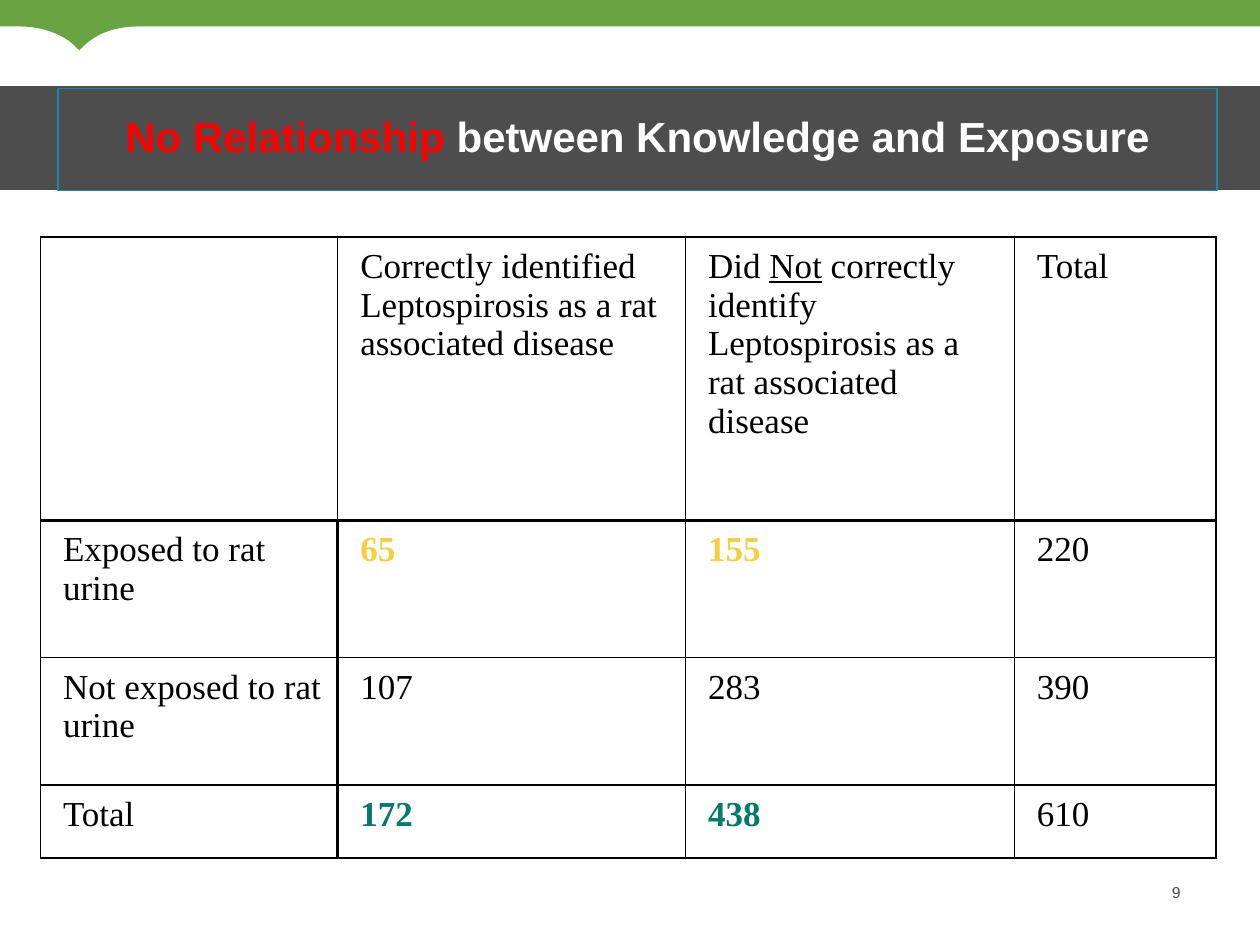
"""Builds a slide with a cross table of disease knowledge against exposure."""
import pptx
import pptx.enum.shapes
import pptx.enum.text
import pptx.oxml
import pptx.util
from pptx.dml.color import RGBColor
from pptx.oxml.ns import nsdecls
from pptx.util import Inches, Pt

GREEN = RGBColor(0x6A, 0xA3, 0x42)
GRAY = RGBColor(0x4D, 0x4D, 0x4D)
BLUE = RGBColor(0x15, 0x8C, 0xA6)
RED = RGBColor(0xFF, 0, 0)
WHITE = RGBColor(0xFF, 0xFF, 0xFF)
BLACK = RGBColor(0, 0, 0)
YELLOW = RGBColor(0xF7, 0xCE, 0x3C)
TEAL = RGBColor(0, 0x7B, 0x69)

WIDTH, HEIGHT = 10, 7.5
TITLE = [("No Relationship ", RED), ("between Knowledge and Exposure", WHITE)]
PAGE = "9"
ROWS = [
    ["", "Correctly identified Leptospirosis as a rat associated disease",
     ("Did ", "Not", " correctly identify Leptospirosis as a rat associated disease"), "Total"],
    ["Exposed to rat urine", "65", "155", "220"],
    ["Not exposed to rat urine", "107", "283", "390"],
    ["Total", "172", "438", "610"],
]
HIGHLIGHTS = {(1, 1): YELLOW, (1, 2): YELLOW, (3, 1): TEAL, (3, 2): TEAL}
COL_WIDTHS = [2.36, 2.76, 2.61, 1.6]
ROW_HEIGHTS = [2.25, 1.09, 1.01, 0.58]
THIN, THICK = 1, 2.25
BAND_DEPTH = 0.21
NOTCH = [
    [(1.12, BAND_DEPTH), (0.96, BAND_DEPTH), (0.83, 0.24), (0.72, 0.32)],
    [(0.72, 0.32), (0.69, 0.34), (0.66, 0.37), (0.63, 0.4)],
    [(0.63, 0.4), (0.6, 0.37), (0.57, 0.34), (0.54, 0.32)],
    [(0.54, 0.32), (0.42, 0.24), (0.29, BAND_DEPTH), (0.13, BAND_DEPTH)],
]


def curve_points(a, b, c, d, steps=12):
    for i in range(steps + 1):
        t = i / steps
        u = 1 - t
        yield tuple(u**3 * a[k] + 3 * u * u * t * b[k] + 3 * u * t * t * c[k] + t**3 * d[k]
                    for k in (0, 1))


def add_run(p, text, size, font, color, bold=False, underline=False):
    r = p.add_run()
    r.text = text
    r.font.size, r.font.name = Pt(size), font
    r.font.bold, r.font.underline = bold, underline
    r.font.color.rgb = color


def add_band(s):
    outline = [(WIDTH, 0), (WIDTH, BAND_DEPTH)]
    for curve in NOTCH:
        outline += curve_points(*curve)
    outline.append((0, BAND_DEPTH))
    fb = s.shapes.build_freeform(0, 0)
    fb.add_line_segments([(Inches(x), Inches(y)) for x, y in outline], close=True)
    sp = fb.convert_to_shape()
    sp.shadow.inherit = False
    sp.fill.solid()
    sp.fill.fore_color.rgb = GREEN
    sp.line.fill.background()


def add_rect(s, left, top, width, height, line, weight):
    sp = s.shapes.add_shape(pptx.enum.shapes.MSO_SHAPE.RECTANGLE, Inches(left), Inches(top),
                            Inches(width), Inches(height))
    sp.shadow.inherit = False
    sp.fill.background()
    sp.line.color.rgb = line
    sp.line.width = Pt(weight)
    return sp


def add_title(s):
    bar = add_rect(s, 0, 0.69, WIDTH, 0.81, GRAY, 1)
    bar.fill.solid()
    bar.fill.fore_color.rgb = GRAY
    tf = add_rect(s, 0.46, 0.7, 9.2, 0.81, BLUE, 0.75).text_frame
    tf.word_wrap = True
    tf.vertical_anchor = pptx.enum.text.MSO_ANCHOR.MIDDLE
    p = tf.paragraphs[0]
    p.alignment = pptx.enum.text.PP_ALIGN.CENTER
    p.line_spacing = 0.9
    for text, color in TITLE:
        add_run(p, text, 24, "Arial", color, bold=True)


def set_borders(cell, **weights):
    tc_pr = cell._tc.get_or_add_tcPr()
    for i, side in enumerate("LRTB"):
        tc_pr.insert(i, pptx.oxml.parse_xml(
            f'<a:ln{side} {nsdecls("a")} w="{int(Pt(weights.get(side, THIN)))}"><a:solidFill>'
            f'<a:srgbClr val="{BLACK}"/></a:solidFill></a:ln{side}>'))


def fill_cell(cell, row, col, content):
    cell.fill.background()
    cell.margin_left = cell.margin_right = Inches(0.08)
    cell.margin_top = cell.margin_bottom = Inches(0.08)
    p = cell.text_frame.paragraphs[0]
    p._p.get_or_add_pPr().set("marL", str(Inches(0.1)))
    p.font.size = Pt(20)
    parts = (content,) if isinstance(content, str) else content
    for i, text in enumerate(filter(None, parts)):
        add_run(p, text, 20, "Times New Roman", HIGHLIGHTS.get((row, col), BLACK),
                (row, col) in HIGHLIGHTS, underline=i == 1)
    set_borders(cell,
                L=THICK if row and col == 1 else THIN,
                R=THICK if row and col == 0 else THIN,
                T=THICK if row == 1 else THIN,
                B=THICK if row == 0 else THIN)


def add_cross_table(s):
    table = s.shapes.add_table(len(ROWS), len(COL_WIDTHS), Inches(0.32), Inches(1.88),
                               Inches(sum(COL_WIDTHS)), Inches(sum(ROW_HEIGHTS))).table
    table.first_row = table.horz_banding = False
    for column, width in zip(table.columns, COL_WIDTHS):
        column.width = Inches(width)
    for i, (height, contents) in enumerate(zip(ROW_HEIGHTS, ROWS)):
        table.rows[i].height = Inches(height)
        for j, content in enumerate(contents):
            fill_cell(table.cell(i, j), i, j, content)


def add_page_number(s):
    tf = s.shapes.add_textbox(Inches(9.03), Inches(7.01), Inches(0.34), Inches(0.15)).text_frame
    tf.word_wrap = True
    tf.margin_left = tf.margin_right = tf.margin_top = tf.margin_bottom = 0
    p = tf.paragraphs[0]
    p.alignment = pptx.enum.text.PP_ALIGN.RIGHT
    add_run(p, PAGE, 9, "Arial", GRAY)


def main():
    prs = pptx.Presentation()
    prs.slide_width, prs.slide_height = Inches(WIDTH), Inches(HEIGHT)
    s = prs.slides.add_slide(prs.slide_layouts[6])
    add_page_number(s)
    add_band(s)
    add_title(s)
    add_cross_table(s)
    prs.save("out.pptx")


if __name__ == "__main__":
    main()
